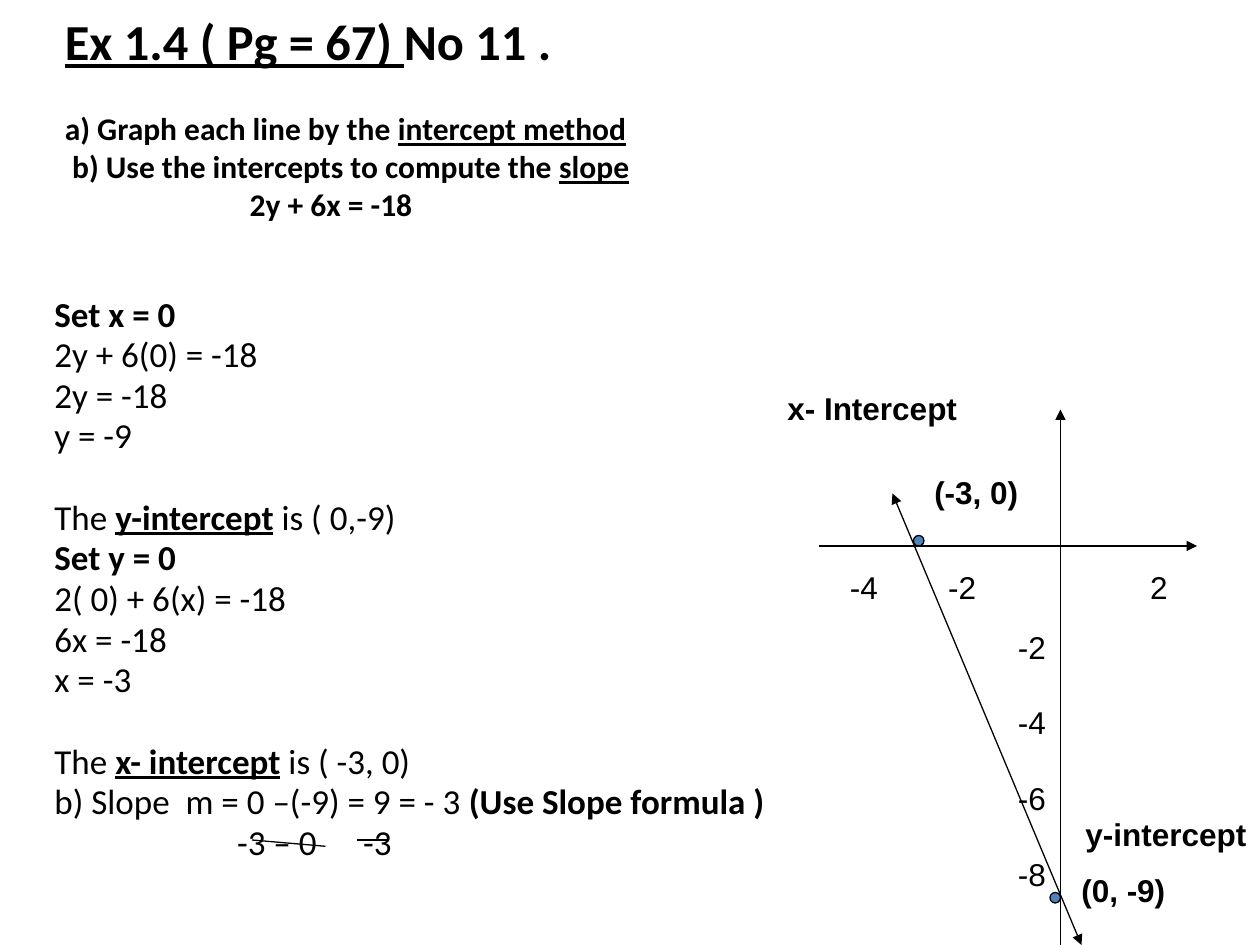
from lxml.etree import SubElement
from pptx import Presentation
from pptx.dml.color import RGBColor
from pptx.enum.shapes import MSO_CONNECTOR, MSO_SHAPE
from pptx.enum.text import PP_ALIGN
from pptx.oxml.ns import qn
from pptx.util import Inches, Pt

BLACK = RGBColor(0, 0, 0)
BLUE = RGBColor(0x4F, 0x81, 0xBD)
COLS, ROWS = 120, 90
WIDE, HIGH = Inches(10), Inches(7.5)

TASK = [
    ([("Ex 1.4 ( Pg = 67) ", "bu"), ("No 11 .", "b")], 28.8, 0),
    ([("a) Graph each line by the ", "b"), ("intercept method", "bu")], 18, 0),
    ([("b) Use the intercepts to compute the ", "b"), ("slope", "bu")], 18, 0.7),
    ([("2y + 6x = -18", "b")], 18, 17.6),
]
WORK = [
    [("Set x = 0", "b")],
    [("2y + 6(0) = -18", "")],
    [("2y = -18", "")],
    [("y = -9", "")],
    [("The ", ""), ("y-intercept", "bu"), (" ", "b"), ("is ( 0,-9)", "")],
    [("Set y = 0", "b")],
    [("2( 0) + 6(x) = -18", "")],
    [("6x = -18", "")],
    [("x = -3", "")],
    [("The ", ""), ("x- intercept", "bu"), (" is ( -3, 0)", "")],
    [("b) Slope  m = 0 –(-9) = 9 = - 3 ", ""), ("(Use Slope formula )", "b")],
    [("-3 – 0", "")],
]
POINTS = [
    ("x- Intercept", 0.8, 0.5, 18.6),
    ("(-3, 0)", 14.8, 8.5, 10.4),
    ("(0, -9)", 28.8, 46.4, 10.4),
    ("y-intercept", 29.2, 41, 17.8),
]


def across(cols):
    """Turn grid columns into a length."""
    return round(cols * WIDE / COLS)


def down(rows):
    """Turn grid rows into a length."""
    return round(rows * HIGH / ROWS)


def frame(slide, box, wrap=True):
    """Add a text box on the grid and return its text frame."""
    left, top, wide, high = box
    text = slide.shapes.add_textbox(across(left), down(top), across(wide), down(high))
    text.text_frame.word_wrap = wrap
    return text.text_frame


def style(run, size, marks="", face="Calibri"):
    """Format a run; marks may hold b for bold and u for underline."""
    font = run.font
    font.name, font.size = face, Pt(size)
    font.bold, font.underline = "b" in marks, "u" in marks
    font.color.rgb = BLACK


def fill(para, parts, size, indent=0):
    """Write styled parts into a paragraph with an indent in columns."""
    para._p.get_or_add_pPr().set("marL", str(across(indent)))
    for text, marks in parts:
        run = para.add_run()
        run.text = text
        style(run, size, marks)


def label(slide, text, box, size=18, marks="", face="Arial", align=PP_ALIGN.LEFT):
    """Add a one-line label."""
    para = frame(slide, box, False).paragraphs[0]
    para.text = text
    para.alignment = align
    style(para.runs[0], size, marks, face)


def stroke(slide, start, end, heads=()):
    """Draw a thin straight line with the given arrowheads."""
    line = slide.shapes.add_connector(
        MSO_CONNECTOR.STRAIGHT,
        across(start[0]), down(start[1]), across(end[0]), down(end[1]))
    line.line.color.rgb = BLACK
    line.line.width = Pt(0.75)
    for head in heads:
        SubElement(line.line._get_or_add_ln(), qn("a:" + head)).set("type", "triangle")
    SubElement(line._element.spPr, qn("a:effectLst"))


def dot(slide, col, row):
    """Mark a point of the graph."""
    mark = slide.shapes.add_shape(
        MSO_SHAPE.OVAL, across(col), down(row), across(1), down(1))
    mark.shadow.inherit = False
    mark.fill.solid()
    mark.fill.fore_color.rgb = BLUE
    mark.line.color.rgb = BLACK
    mark.line.width = Pt(0.75)


def heading(slide, box):
    """Write the exercise title and its task."""
    text = frame(slide, box)
    text.margin_top = 0
    for spot, (parts, size, indent) in enumerate(TASK):
        para = text.add_paragraph() if spot else text.paragraphs[0]
        fill(para, parts, size, indent)
    text.paragraphs[0].space_after = Pt(22)


def working(slide, box):
    """Write the solution steps and the slope fractions."""
    left, top = box[:2]
    text = frame(slide, box)
    for spot, parts in enumerate(WORK):
        para = text.add_paragraph() if spot else text.paragraphs[0]
        fill(para, parts, 20, 17.4 if parts is WORK[-1] else 0)
        para.line_spacing = 0.8
        para.space_before = Pt(27.2 if parts[0][0] == "The " else 4)
    label(slide, "-3", (left + 29.4, top + 49.6, 7, 5), 20, face="Calibri")
    stroke(slide, (left + 20, top + 52), (left + 27, top + 52.6))
    stroke(slide, (left + 30, top + 52), (left + 33, top + 52))


def graph(slide, box):
    """Draw the axes, the line, its intercepts and all labels."""
    left, top, wide, high = box
    mid, zero = left + 28, top + 16
    stroke(slide, (left + 5, zero), (left + 41, zero), ["tailEnd"])
    stroke(slide, (mid, top + high), (mid, top + 3), ["tailEnd"])
    stroke(slide, (left + 12, top + 11), (left + 30, top + high), ["headEnd", "tailEnd"])
    for tick in (-4, -2, 2):
        label(slide, str(tick), (mid + 4.68 * tick - 3.5, zero + 1.5, 7, 4.8),
              align=PP_ALIGN.CENTER)
    for tick in (-2, -4, -6, -8):
        label(slide, str(tick), (mid - 7.2, zero - 3.6 * tick, 7, 4.8),
              align=PP_ALIGN.RIGHT)
    for text, col, row, span in POINTS:
        label(slide, text, (left + col, top + row, span, 4.8), marks="b")
    dot(slide, left + 14, top + 15)
    dot(slide, left + 27, top + 49)


def main():
    """Build the slide and save it."""
    deck = Presentation()
    deck.slide_width, deck.slide_height = WIDE, HIGH
    slide = deck.slides.add_slide(deck.slide_layouts[6])
    heading(slide, (5, 1, 108, 20))
    working(slide, (4, 28, 108, 59.4))
    graph(slide, (73, 36, 47, 54))
    deck.save("out.pptx")


if __name__ == "__main__":
    main()
